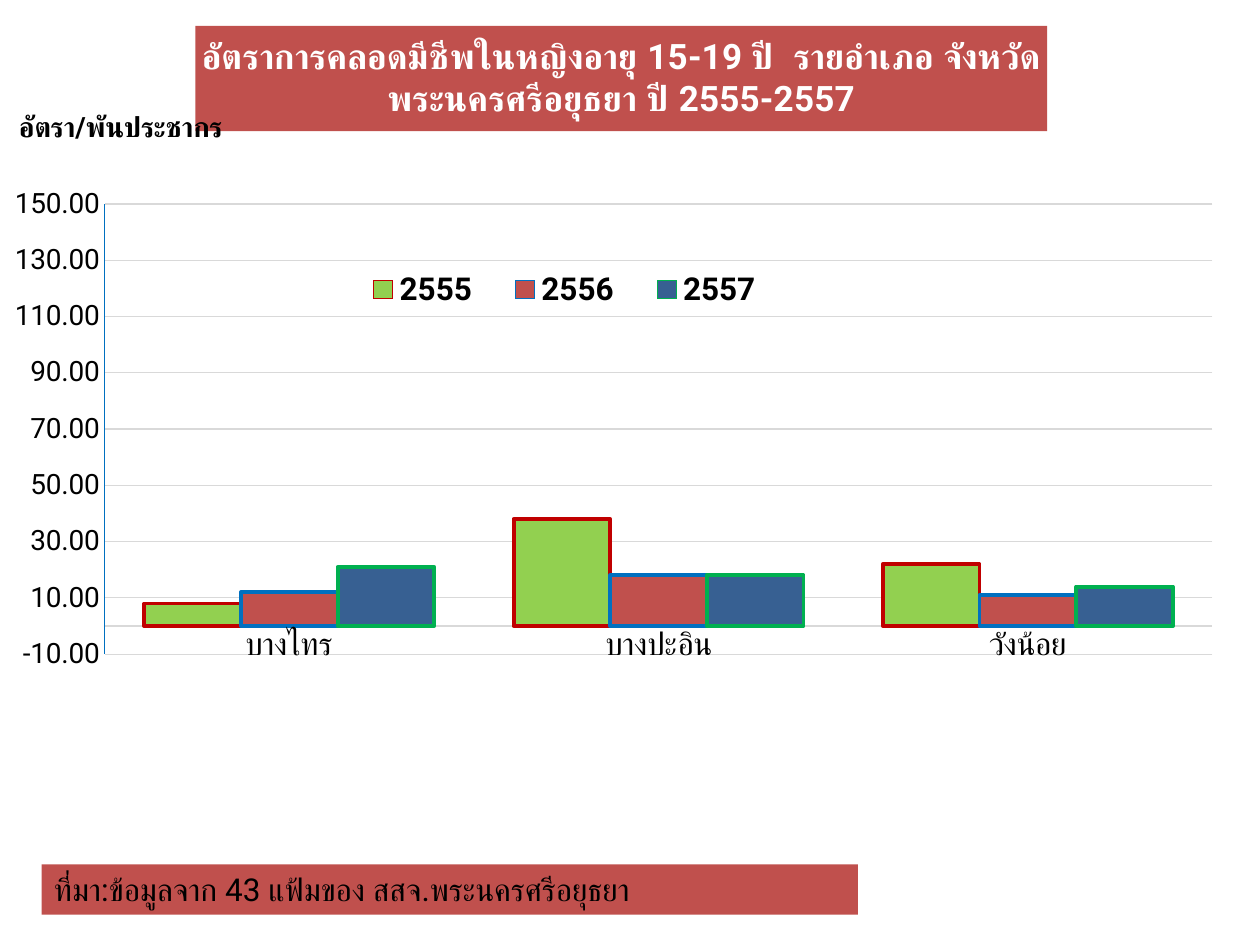
from lxml.etree import SubElement
from pptx import Presentation
from pptx.chart.data import CategoryChartData
from pptx.dml.color import RGBColor
from pptx.enum.chart import XL_CHART_TYPE, XL_LEGEND_POSITION, XL_TICK_MARK
from pptx.enum.shapes import MSO_SHAPE
from pptx.enum.text import MSO_ANCHOR, MSO_AUTO_SIZE, PP_ALIGN
from pptx.oxml.ns import qn
from pptx.util import Inches, Pt

FONT = "Roboto"
COLORS = {"black": "000000", "white": "FFFFFF", "red": "C0504D", "grid": "D9D9D9",
          "axis": "0070C0", "green": "92D050", "navy": "376092",
          "red_line": "C00000", "green_line": "00B050"}
TITLE = "อัตราการคลอดมีชีพในหญิงอายุ 15-19 ปี  รายอำเภอ จังหวัดพระนครศรีอยุธยา ปี 2555-2557"
AXIS_TITLE = "อัตรา/พันประชากร"
SOURCE = "ที่มา:ข้อมูลจาก 43 แฟ้มของ สสจ.พระนครศรีอยุธยา"
DISTRICTS = ["บางไทร", "บางปะอิน", "วังน้อย"]
YEARS = [("2555", [8, 38, 22], "green", "red_line"),
         ("2556", [12, 18, 11], "red", "axis"),
         ("2557", [21, 18, 14], "navy", "green_line")]


def rgb(name):
    return RGBColor.from_string(COLORS[name])


def set_fill(fill, color):
    fill.solid()
    fill.fore_color.rgb = rgb(color)


def set_line(line, color, width=0.75):
    line.color.rgb = rgb(color)
    line.width = Pt(width)


def set_font(font, size, color="black", bold=False):
    font.name = FONT
    font.size = Pt(size)
    font.bold = bold
    font.color.rgb = rgb(color)


def set_title(title, text, size, color):
    title.text_frame.text = text
    set_font(title.text_frame.paragraphs[0].runs[0].font, size, color, True)


def place(element, after, **values):
    for old in element.findall(qn("c:layout")):
        element.remove(old)
    layout = SubElement(element, qn("c:layout"))
    manual = SubElement(layout, qn("c:manualLayout"))
    for key, value in values.items():
        SubElement(manual, qn("c:" + key)).set("val", str(value))
    if after:
        element.find(qn(after)).addnext(layout)
    else:
        element.insert(0, layout)


prs = Presentation()
prs.slide_width, prs.slide_height = Inches(10), Inches(7.5)
s = prs.slides.add_slide(prs.slide_layouts[6])

data = CategoryChartData()
data.categories = DISTRICTS
for year, rates, _, _ in YEARS:
    data.add_series(year, rates)
chart = s.shapes.add_chart(XL_CHART_TYPE.COLUMN_CLUSTERED, Inches(0.11), Inches(0),
                           Inches(9.61), Inches(6.86), data).chart
set_font(chart.font, 16)

plot = chart.plots[0]
plot.gap_width = 82
plot.overlap = 0
plot.vary_by_categories = False
for series, (_, _, fill, line) in zip(plot.series, YEARS):
    set_fill(series.format.fill, fill)
    set_line(series.format.line, line, 2.25)

cat, val = chart.category_axis, chart.value_axis
for axis in (cat, val):
    axis.major_tick_mark = axis.minor_tick_mark = XL_TICK_MARK.NONE
set_font(cat.tick_labels.font, 18)
set_line(cat.format.line, "grid")
val.minimum_scale, val.maximum_scale, val.major_unit = -10, 150, 20
val.tick_labels.number_format = "0.00"
val.tick_labels.number_format_is_linked = False
set_font(val.tick_labels.font, 16)
set_line(val.format.line, "axis")
val.has_major_gridlines = True
set_line(val.major_gridlines.format.line, "grid")

chart.has_title = True
set_title(chart.chart_title, TITLE, 20, "white")
set_fill(chart.chart_title.format.fill, "red")
set_title(val.axis_title, AXIS_TITLE, 16, "black")
body = val.axis_title.text_frame._txBody.bodyPr
body.set("rot", "0")
body.set("vert", "horz")

chart.has_legend = True
legend = chart.legend
legend.position = XL_LEGEND_POSITION.BOTTOM
legend.include_in_layout = False
set_font(legend.font, 18, bold=True)

edges = {"xMode": "edge", "yMode": "edge"}
place(chart.chart_title._element, "c:tx", **edges, x=0.15, y=0.03)
place(val.axis_title._element, "c:tx", **edges, x=0, y=0.12)
place(legend._element, "c:legendPos", **edges, x=0.27, y=0.3, w=0.37, h=0.07)
place(plot._element.getparent(), None, layoutTarget="inner", **edges,
      x=0.075, y=0.236, w=0.915, h=0.521)

sp = s.shapes.add_shape(MSO_SHAPE.RECTANGLE, Inches(0.33), Inches(6.86), Inches(6.48), Inches(0.4))
sp.shadow.inherit = False
set_fill(sp.fill, "red")
sp.line.fill.background()
tf = sp.text_frame
tf.word_wrap = True
tf.auto_size = MSO_AUTO_SIZE.SHAPE_TO_FIT_TEXT
tf.vertical_anchor = MSO_ANCHOR.TOP
tf.text = SOURCE
p = tf.paragraphs[0]
p.alignment = PP_ALIGN.LEFT
set_font(p.runs[0].font, 18)

prs.save("out.pptx")
